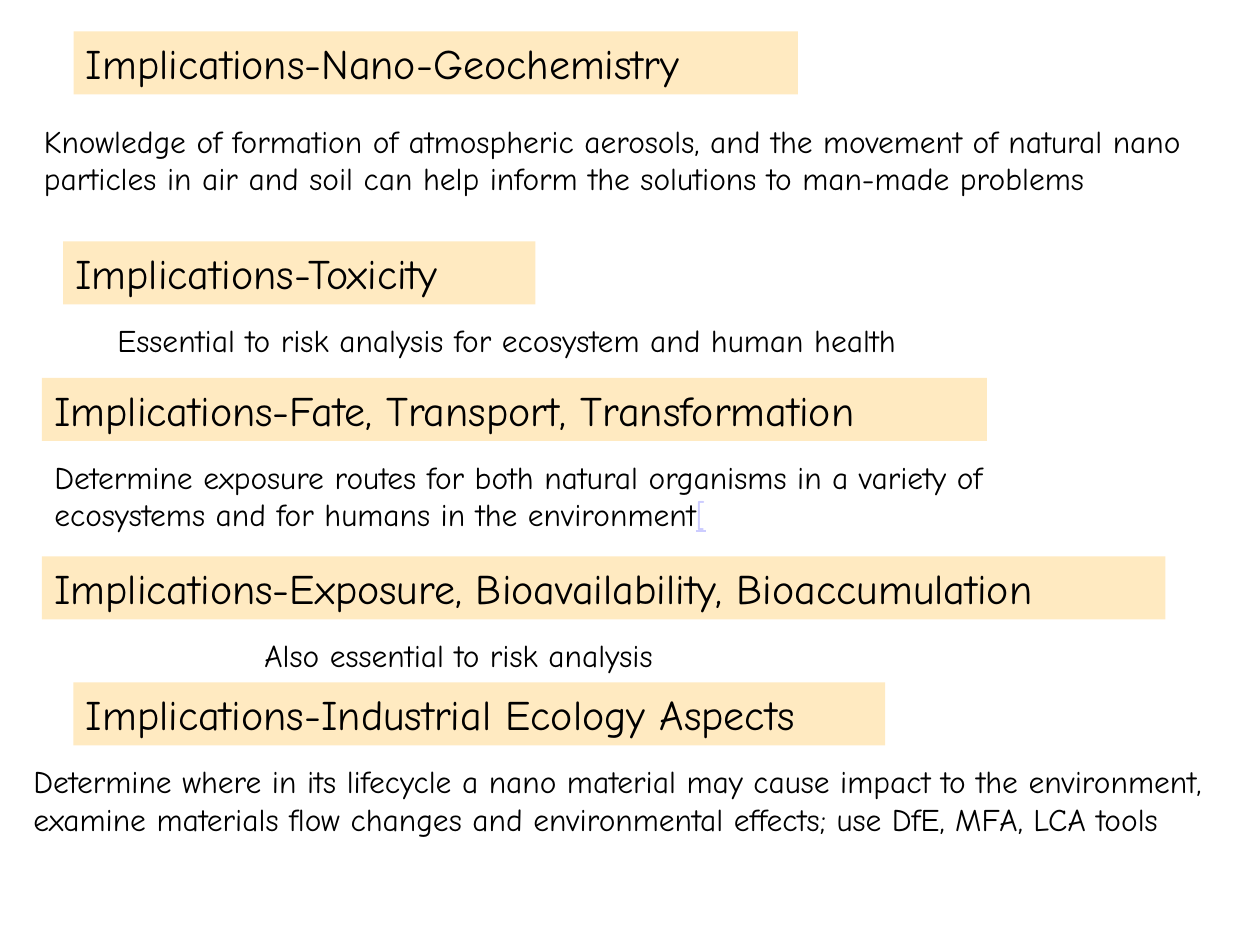
from pptx import Presentation
from pptx import util as u
from pptx.dml import color
from pptx.enum import shapes, text

CELL = u.Inches(1) / 12
FONT = "Comic Neue"
INK, BAND, BRACKET = "000000", "FFEAC1", "CCCCFF"

SECTIONS = [
    ("Implications-Nano-Geochemistry", (7, 3, 69, 6),
     "Knowledge of formation of atmospheric aerosols, and the movement of natural nano "
     "particles in air and soil can help inform the solutions to man-made problems",
     (3, 11, 117, 8.4), ""),
    ("Implications-Toxicity", (6, 23, 45, 6),
     "Essential to risk analysis for ecosystem and human health",
     (10, 30, 82.9, 4.8), ""),
    ("Implications-Fate, Transport, Transformation", (4, 36, 90, 6),
     "Determine exposure routes for both natural organisms in a variety of "
     "ecosystems and for humans in the environment",
     (4, 43, 101.6, 8.4), "["),
    ("Implications-Exposure, Bioavailability, Bioaccumulation", (4, 53, 107, 6),
     "Also essential to risk analysis", (24, 60, 43.6, 4.8), ""),
    ("Implications-Industrial Ecology Aspects", (7, 65, 77.3, 6),
     "Determine where in its lifecycle a nano material may cause impact to the environment, "
     "examine materials flow changes and environmental effects; use DfE, MFA, LCA tools",
     (2, 72, 118, 12), ""),
]


def rgb(value):
    """Turn a hex string into a colour."""
    return color.RGBColor.from_string(value)


def place(box):
    """Convert columns and rows of the grid into lengths."""
    return [u.Emu(round(cells * CELL)) for cells in box]


def format_run(run, size, ink=INK):
    """Set the font, size and colour of a run."""
    run.font.name = FONT
    run.font.size = u.Pt(size)
    run.font.color.rgb = rgb(ink)


def write(frame, wording, size):
    """Fill a frame with one left-aligned paragraph and return it."""
    frame.word_wrap = True
    frame.vertical_anchor = text.MSO_ANCHOR.TOP
    frame.text = wording
    paragraph = frame.paragraphs[0]
    paragraph.alignment = text.PP_ALIGN.LEFT
    format_run(paragraph.runs[0], size)
    return paragraph


def add_heading(slide, wording, box):
    """Draw a section heading on its coloured band."""
    band = slide.shapes.add_shape(shapes.MSO_SHAPE.RECTANGLE, *place(box))
    band.shadow.inherit = False
    band.fill.solid()
    band.fill.fore_color.rgb = rgb(BAND)
    band.line.fill.background()
    write(band.text_frame, wording, 24)


def add_explanation(slide, wording, box, bracket):
    """Write the explanation of a section, with its closing bracket if any."""
    explanation = slide.shapes.add_textbox(*place(box))
    paragraph = write(explanation.text_frame, wording, 18)
    if bracket:
        mark = paragraph.add_run()
        mark.text = bracket
        format_run(mark, 18, BRACKET)
        mark.font.underline = True


def main():
    """Build the slide and save it."""
    deck = Presentation()
    deck.slide_width, deck.slide_height = u.Inches(10), u.Inches(7.5)
    slide = deck.slides.add_slide(deck.slide_layouts[6])
    for heading, band_box, explanation, text_box, bracket in SECTIONS:
        add_heading(slide, heading, band_box)
        add_explanation(slide, explanation, text_box, bracket)
    deck.save("out.pptx")


if __name__ == "__main__":
    main()
